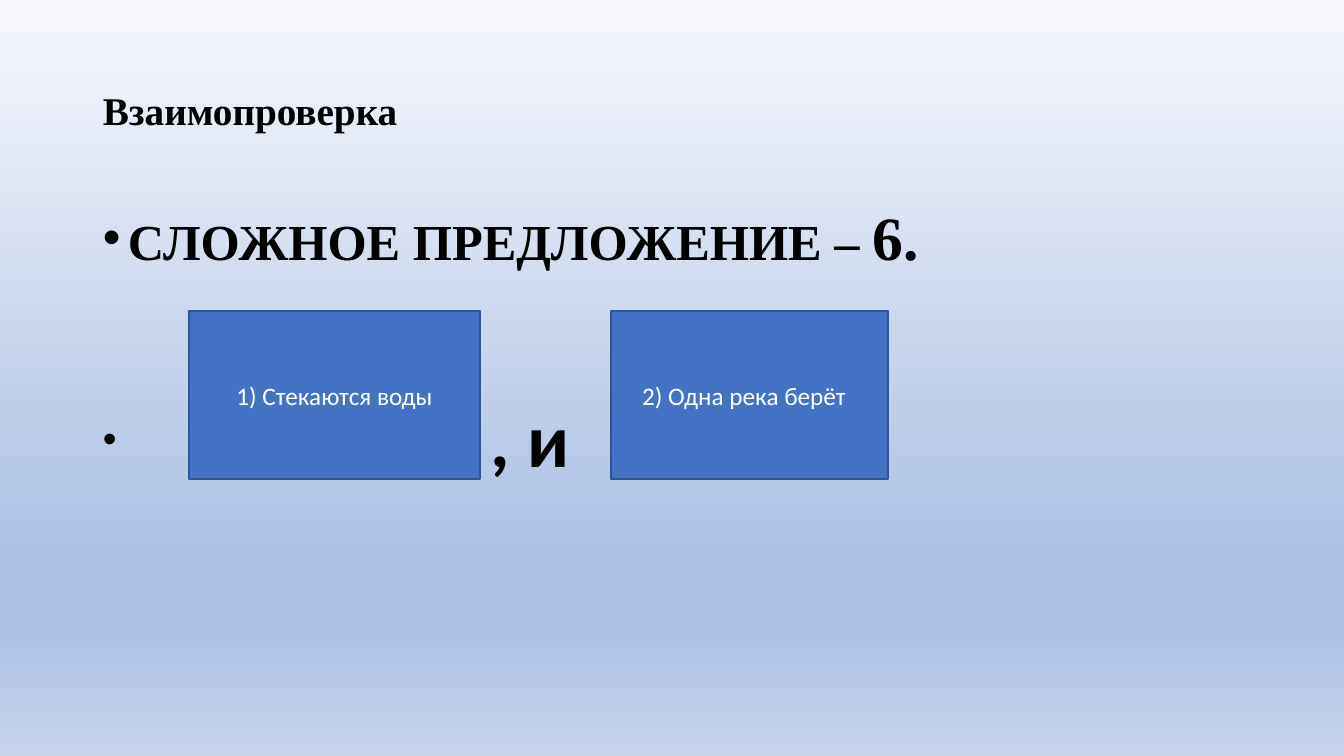
from lxml.etree import SubElement
from pptx import Presentation
from pptx.dml.color import RGBColor
from pptx.enum.shapes import MSO_SHAPE
from pptx.enum.text import MSO_ANCHOR, PP_ALIGN
from pptx.oxml.ns import qn
from pptx.util import Pt

# Content: runs are (text, size, font)
SERIF, SANS = "Times New Roman", "Calibri"
TITLE = [("Взаимопроверка", 28, SERIF)]
HEADING = [("СЛОЖНОЕ ПРЕДЛОЖЕНИЕ – ", 36, SERIF), ("6.", 44, SERIF)]
CONJUNCTION = [(", и", 54, SANS)]
# Clauses: text, left, width, right inset
CLAUSES = [
    ("1) Стекаются воды", 189, 291, 10),
    ("2) Одна река берёт", 611, 277, 21),
]
CLAUSE_TOP, CLAUSE_HEIGHT = 311, 168

BLACK = RGBColor(0x00, 0x00, 0x00)
WHITE = RGBColor(0xFF, 0xFF, 0xFF)
BLUE = RGBColor(0x44, 0x72, 0xC4)
DARK_BLUE = RGBColor(0x32, 0x54, 0x91)
BACKGROUND = [
    (0, RGBColor(0xF6, 0xF8, 0xFC)),
    (74, RGBColor(0xAB, 0xC0, 0xE4)),
    (83, RGBColor(0xAB, 0xC0, 0xE4)),
    (100, RGBColor(0xC7, 0xD5, 0xED)),
]


def px(length):
    return round(length * 914400 / 100.8)


def add_runs(paragraph, runs, color, bold):
    for text, size, font in runs:
        run = paragraph.add_run()
        run.text = text
        run.font.size = Pt(size)
        run.font.name = font
        run.font.bold = bold
        run.font.color.rgb = color


def add_text_frame(slide, left, top, width, height, anchor):
    frame = slide.shapes.add_textbox(px(left), px(top), px(width), px(height)).text_frame
    frame.word_wrap = True
    frame.vertical_anchor = anchor
    return frame


def set_bullet(paragraph, hang, percent):
    properties = paragraph._p.get_or_add_pPr()
    properties.set("marL", str(px(hang)))
    properties.set("indent", str(-px(hang)))
    SubElement(properties, qn("a:buSzPct")).set("val", str(percent * 1000))
    SubElement(properties, qn("a:buFont")).set("typeface", "Arial")
    SubElement(properties, qn("a:buChar")).set("char", "•")


def paint_background(slide):
    fill = slide.background.fill
    fill.gradient()
    fill.gradient_angle = 270
    stops = slide.background._cSld.find(".//" + qn("a:gsLst"))
    for stop in list(stops):
        stops.remove(stop)
    for position, color in BACKGROUND:
        stop = SubElement(stops, qn("a:gs"))
        stop.set("pos", str(position * 1000))
        SubElement(stop, qn("a:srgbClr")).set("val", str(color))


def main():
    presentation = Presentation()
    presentation.slide_width, presentation.slide_height = px(1344), px(756)
    slide = presentation.slides.add_slide(presentation.slide_layouts[6])
    paint_background(slide)

    # Title
    title = add_text_frame(slide, 93, 40, 1159, 146, MSO_ANCHOR.MIDDLE).paragraphs[0]
    title.line_spacing = 0.9
    add_runs(title, TITLE, BLACK, True)

    # Bulleted body: the second bullet hangs far left of its conjunction
    body = add_text_frame(slide, 93, 202, 1159, 480, MSO_ANCHOR.TOP)
    lines = [(HEADING, 10, 25, 100), (CONJUNCTION, 92, 388, 52)]
    for index, (runs, space, hang, percent) in enumerate(lines):
        paragraph = body.add_paragraph() if index else body.paragraphs[0]
        paragraph.line_spacing = 0.9
        paragraph.space_before = Pt(space)
        set_bullet(paragraph, hang, percent)
        add_runs(paragraph, runs, BLACK, True)

    # Clause boxes
    for text, left, width, right_inset in CLAUSES:
        shape = slide.shapes.add_shape(
            MSO_SHAPE.RECTANGLE, px(left), px(CLAUSE_TOP), px(width), px(CLAUSE_HEIGHT))
        shape.shadow.inherit = False
        shape.fill.solid()
        shape.fill.fore_color.rgb = BLUE
        shape.line.color.rgb = DARK_BLUE
        shape.line.width = Pt(1)
        frame = shape.text_frame
        frame.word_wrap = True
        frame.vertical_anchor = MSO_ANCHOR.MIDDLE
        frame.margin_right = px(right_inset)
        frame.paragraphs[0].alignment = PP_ALIGN.CENTER
        add_runs(frame.paragraphs[0], [(text, 18, SANS)], WHITE, False)

    presentation.save("out.pptx")


if __name__ == "__main__":
    main()
